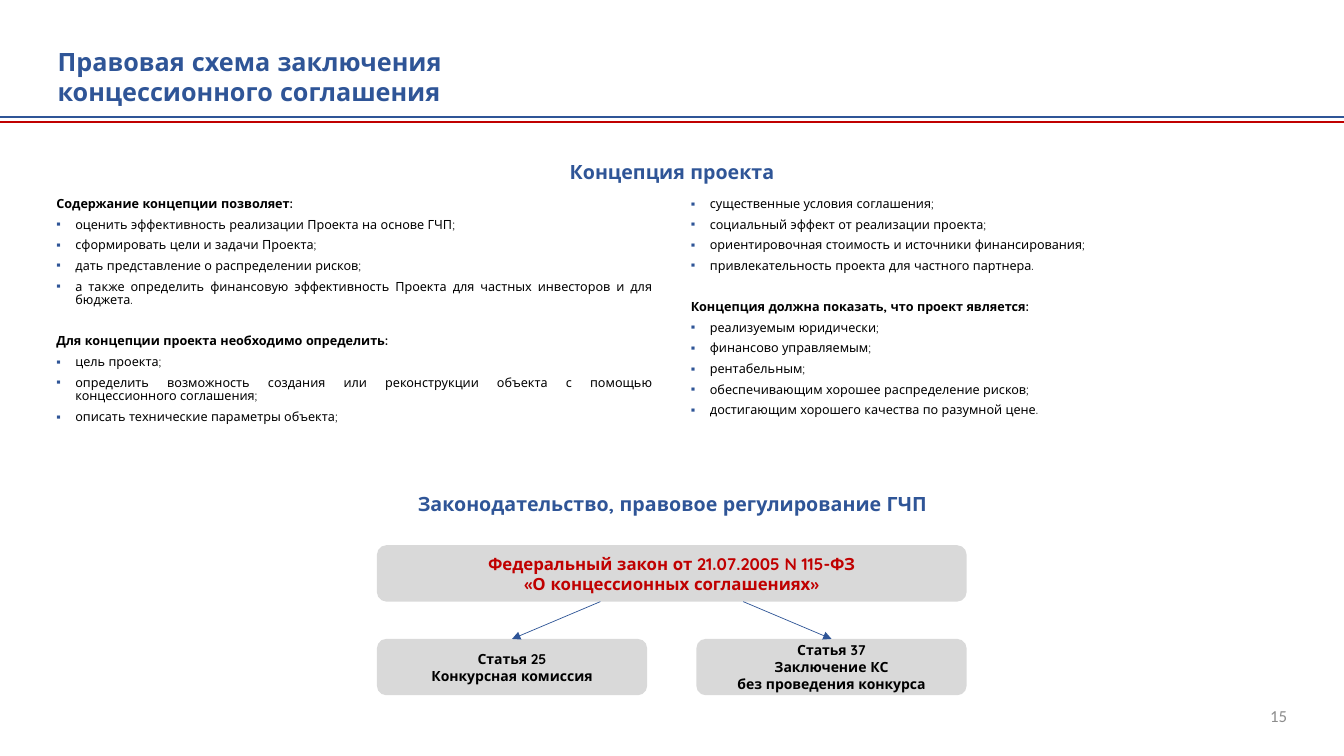
from lxml import etree
from pptx import Presentation
from pptx.dml.color import RGBColor
from pptx.enum.shapes import MSO_CONNECTOR as Connector, MSO_SHAPE as Shape
from pptx.enum.text import MSO_ANCHOR as Anchor, MSO_AUTO_SIZE as AutoSize, PP_ALIGN as Align
from pptx.oxml.ns import qn
from pptx.util import Cm, Pt

# Content
TITLE = ["Правовая схема заключения", "концессионного соглашения"]
CONCEPT_HEADING = "Концепция проекта"
CONCEPT = [
    ("Содержание концепции позволяет:", [
        "оценить эффективность реализации Проекта на основе ГЧП;",
        "сформировать цели и задачи Проекта;",
        "дать представление о распределении рисков;",
        "а также определить финансовую эффективность Проекта для частных инвесторов и для бюджета.",
    ]),
    ("Для концепции проекта необходимо определить:", [
        "цель проекта;",
        "определить возможность создания или реконструкции объекта с помощью концессионного соглашения;",
        "описать технические параметры объекта;",
        "существенные условия соглашения;",
        "социальный эффект от реализации проекта;",
        "ориентировочная стоимость и источники финансирования;",
        "привлекательность проекта для частного партнера.",
    ]),
    ("Концепция должна показать, что проект является:", [
        "реализуемым юридически;",
        "финансово управляемым;",
        "рентабельным;",
        "обеспечивающим хорошее распределение рисков;",
        "достигающим хорошего качества по разумной цене.",
    ]),
]
LAW_HEADING = "Законодательство, правовое регулирование ГЧП"
LAW = ["Федеральный закон от 21.07.2005 N 115-ФЗ", "«О концессионных соглашениях»"]
ARTICLES = [
    ["Статья 25", "Конкурсная комиссия"],
    ["Статья 37", "Заключение КС", "без проведения конкурса"],
]
PAGE = "15"

# Style and geometry, in centimetres
BLUE, RED, GREY, BLACK, PALE = "2F5597", "C00000", "D9D9D9", "000000", "8C8C8C"
FONT = "Quicksand"
WIDTH, HEIGHT = 33.87, 19.05
LAW_LEFT, LAW_TOP, LAW_WIDTH, BOX_HEIGHT = 9.5, 13.74, 14.86, 1.42
ARTICLE_TOP, ARTICLE_WIDTH = 16.1, 6.81
ARROW_OFFSET = 1.8


def color(value):
    return RGBColor.from_string(value)


def place(shape, left, top, width, height):
    shape.left, shape.top, shape.width, shape.height = map(Cm, (left, top, width, height))


def style(paragraph, size, ink, bold=True, align=Align.LEFT, name=FONT):
    paragraph.alignment = align
    font = paragraph.font
    font.name, font.size, font.bold = name, Pt(size), bold
    font.color.rgb = color(ink)


def clear_frame(frame, anchor=Anchor.TOP):
    frame.word_wrap, frame.auto_size = True, AutoSize.NONE
    frame.vertical_anchor = anchor
    frame.margin_left = frame.margin_right = frame.margin_top = frame.margin_bottom = 0


def write(frame, lines, *args, **kwargs):
    frame.text = "\n".join(lines)
    for paragraph in frame.paragraphs:
        style(paragraph, *args, **kwargs)


def add_label(text, box, *args, anchor=Anchor.TOP, **kwargs):
    label = slide.shapes.add_textbox(*map(Cm, box))
    clear_frame(label.text_frame, anchor)
    write(label.text_frame, [text], *args, **kwargs)


def add_box(lines, left, top, width, size, ink):
    box = slide.shapes.add_shape(Shape.ROUNDED_RECTANGLE, *map(Cm, (left, top, width, BOX_HEIGHT)))
    box.shadow.inherit = False
    box.fill.solid()
    box.fill.fore_color.rgb = color(GREY)
    box.line.fill.background()
    box.text_frame.word_wrap = True
    box.text_frame.vertical_anchor = Anchor.MIDDLE
    write(box.text_frame, lines, size, ink, align=Align.CENTER)


def add_line(start, end, ink, weight, arrow=False):
    line = slide.shapes.add_connector(Connector.STRAIGHT, *map(Cm, start + end))
    line.line.color.rgb = color(ink)
    line.line.width = Pt(weight)
    if arrow:
        etree.SubElement(line.line._get_or_add_ln(), qn("a:tailEnd"), type="triangle")
    etree.SubElement(line._element.spPr, qn("a:effectLst"))


def set_bullet(paragraph, char=None):
    props = paragraph._p.get_or_add_pPr()
    indent = Cm(0.48) if char else 0
    props.set("marL", str(indent))
    props.set("indent", str(-indent))
    if char:
        tint = etree.SubElement(props, qn("a:buClr"))
        etree.SubElement(tint, qn("a:srgbClr"), val=BLUE)
        etree.SubElement(props, qn("a:buFont"), typeface="Arial")
        etree.SubElement(props, qn("a:buChar"), char=char)
    else:
        etree.SubElement(props, qn("a:buNone"))


prs = Presentation()
prs.slide_width, prs.slide_height = Cm(WIDTH), Cm(HEIGHT)
slide = prs.slides.add_slide(prs.slide_layouts[1])

# Title with the double rule below it
title = slide.shapes.title
place(title, 1.45, 1.17, 26.01, 1.55)
clear_frame(title.text_frame)
write(title.text_frame, TITLE, 18, BLUE)
for y, ink in ((2.95, BLUE), (3.07, RED)):
    add_line((0, y), (WIDTH, y), ink, 1.5)

# Concept: headed lists flowing through two columns
add_label(CONCEPT_HEADING, (7.32, 4.04, 19.23, 0.61), 14, BLUE, align=Align.CENTER)
concept = slide.placeholders[1]
place(concept, 1.42, 4.98, 30.99, 5.97)
frame = concept.text_frame
clear_frame(frame)
columns = frame._txBody.bodyPr
columns.set("numCol", "2")
columns.set("spcCol", str(Cm(0.99)))
rows = [(text, text == head) for head, items in CONCEPT for text in [head, *items]]
for i, (text, is_head) in enumerate(rows):
    paragraph = frame.add_paragraph() if i else frame.paragraphs[0]
    paragraph.text = text
    set_bullet(paragraph, None if is_head else "▪")
    paragraph.line_spacing = 0.9
    paragraph.space_before = Pt(0 if i == 0 else 19.7 if is_head else 5)
    style(paragraph, 9, BLACK, bold=is_head, align=Align.JUSTIFY)

# Law and its articles
add_label(LAW_HEADING, (1.45, 12.4, 30.99, 0.61), 14, BLUE, align=Align.CENTER)
add_box(LAW, LAW_LEFT, LAW_TOP, LAW_WIDTH, 12, RED)
law_center = LAW_LEFT + LAW_WIDTH / 2
for i, article in enumerate(ARTICLES):
    left = LAW_LEFT + i * (LAW_WIDTH - ARTICLE_WIDTH)
    add_box(article, left, ARTICLE_TOP, ARTICLE_WIDTH, 10, BLACK)
    start = (law_center + (2 * i - 1) * ARROW_OFFSET, LAW_TOP + BOX_HEIGHT)
    add_line(start, (left + ARTICLE_WIDTH / 2, ARTICLE_TOP), BLUE, 0.5, arrow=True)

# Page number
add_label(PAGE, (24.82, 17.53, 7.62, 1.02), 12, PALE, bold=False,
          align=Align.RIGHT, name="Calibri", anchor=Anchor.MIDDLE)

prs.save("out.pptx")
